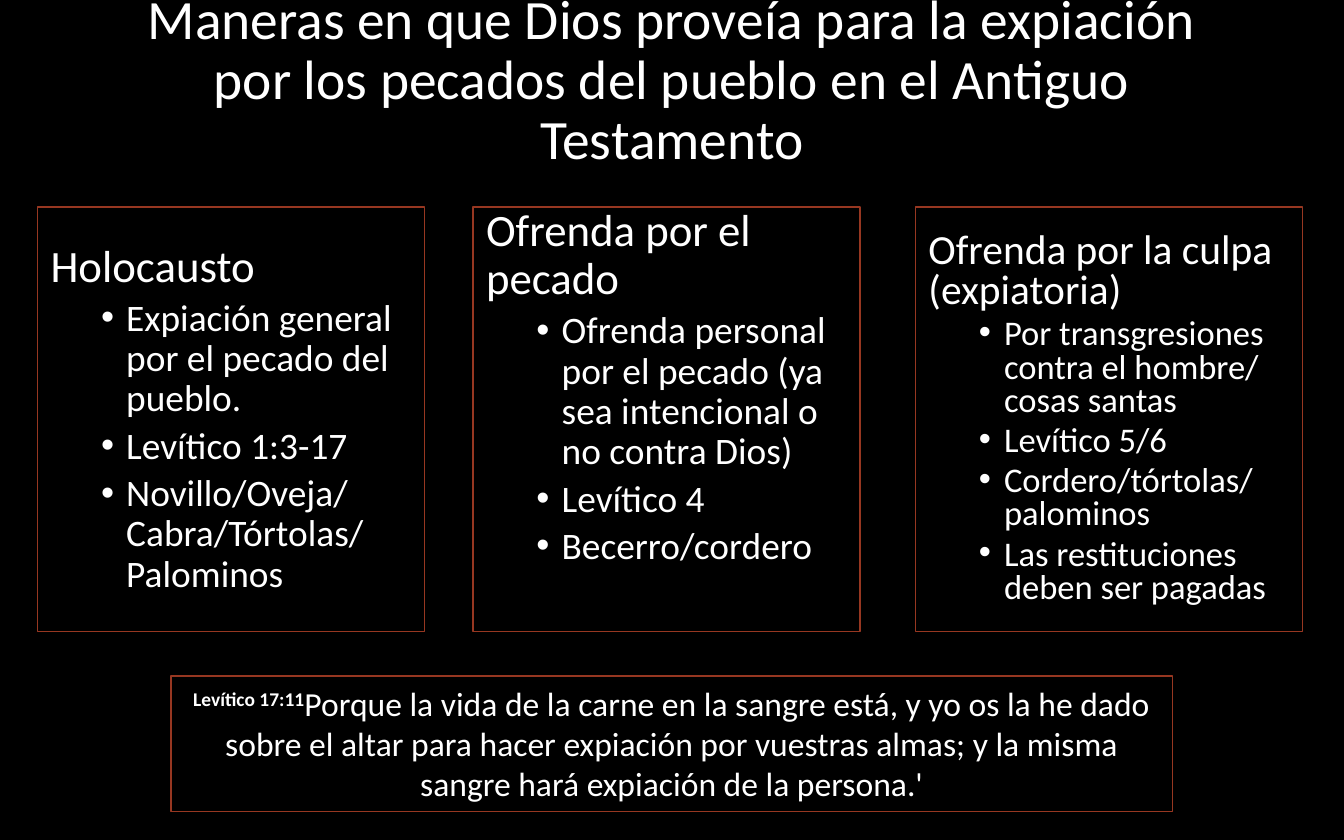
"""Build a slide on the offerings that provided atonement in the Old Testament."""
from lxml import etree
from pptx import Presentation
from pptx.dml.color import RGBColor
from pptx.enum.shapes import MSO_SHAPE
from pptx.enum.text import MSO_ANCHOR, PP_ALIGN
from pptx.oxml.ns import qn
from pptx.util import Pt

RECTANGLE = MSO_SHAPE.RECTANGLE
MIDDLE, TOP = MSO_ANCHOR.MIDDLE, MSO_ANCHOR.TOP
LEFT, CENTER = PP_ALIGN.LEFT, PP_ALIGN.CENTER
BLACK, WHITE, RUST = "000000", "FFFFFF", "973721"


def color(code):
    return RGBColor.from_string(code)


def add_text(paragraph, text, size, bold=False):
    for number, line in enumerate(text.split("\n")):
        if number:
            paragraph.add_line_break()
        run = paragraph.add_run()
        run.text = line
        run.font.name = "Calibri"
        run.font.size = Pt(size)
        run.font.bold = bold
        run.font.color.rgb = color(WHITE)
    return run


presentation = Presentation()
presentation.slide_width, presentation.slide_height = Pt(720), Pt(450)
slide = presentation.slides.add_slide(presentation.slide_layouts[6])
slide.background.fill.solid()
slide.background.fill.fore_color.rgb = color(BLACK)

title = slide.shapes.add_textbox(Pt(49.5), Pt(0), Pt(621), Pt(87)).text_frame
title.word_wrap = True
title.vertical_anchor = MIDDLE
heading = title.paragraphs[0]
heading.alignment = CENTER
heading.line_spacing = 0.9
add_text(heading, "Maneras en que Dios proveía para la expiación por los pecados "
         "del pueblo en el Antiguo Testamento", 29.7)

offerings = [
    (20, 24, 20, 0.9, 3.6, "Holocausto", [
        "Expiación general por el pecado del pueblo.",
        "Levítico 1:3-17",
        "Novillo/Oveja/Cabra/Tórtolas/ Palominos"]),
    (253.3, 24, 20, 0.9, 37.5, "Ofrenda por el pecado", [
        "Ofrenda personal por el pecado (ya sea intencional o no contra Dios)",
        "Levítico 4",
        "Becerro/cordero"]),
    (490.3, 22.2, 18.5, 0.8, 3.6, "Ofrenda por la culpa (expiatoria)", [
        "Por transgresiones contra el hombre/ cosas santas",
        "Levítico 5/6",
        "Cordero/tórtolas/\npalominos",
        "Las restituciones deben ser pagadas"]),
]

panels = [(left, 110.9, 207.4, 227.5, MIDDLE) for left, *_ in offerings]
panels.append((91.6, 362.2, 536.6, 72.6, TOP))
frames = []
for left, top, width, height, anchor in panels:
    panel = slide.shapes.add_shape(RECTANGLE, Pt(left), Pt(top), Pt(width), Pt(height))
    panel.shadow.inherit = False
    panel.fill.background()
    panel.line.color.rgb = color(RUST)
    panel.line.width = Pt(0.75)
    panel.text_frame.word_wrap = True
    panel.text_frame.vertical_anchor = anchor
    frames.append(panel.text_frame)
*offering_frames, verse_frame = frames

for frame, offering in zip(offering_frames, offerings):
    _, name_size, detail_size, spacing, bottom_margin, name, details = offering
    frame.margin_bottom = Pt(bottom_margin)
    offering_name = frame.paragraphs[0]
    offering_name.alignment = LEFT
    offering_name.line_spacing = spacing
    add_text(offering_name, name, name_size)
    for detail in details:
        item = frame.add_paragraph()
        item.level = 1
        properties = item._p.get_or_add_pPr()
        properties.set("marL", str(Pt(40.5)))
        properties.set("indent", str(Pt(-13.5)))
        etree.SubElement(properties, qn("a:buFont")).set("typeface", "Arial")
        etree.SubElement(properties, qn("a:buChar")).set("char", "•")
        item.alignment = LEFT
        item.line_spacing = spacing
        item.space_before = Pt(3.8)
        add_text(item, detail, detail_size)

verse = verse_frame.paragraphs[0]
verse.alignment = CENTER
reference = add_text(verse, "Levítico 17:11", 18, bold=True)
reference.font._element.set("baseline", "30000")
add_text(verse, "Porque la vida de la carne en la sangre está, y yo os la he dado sobre "
         "el altar para hacer expiación por vuestras almas; y la misma sangre hará "
         "expiación de la persona.'", 18)

presentation.save("out.pptx")
